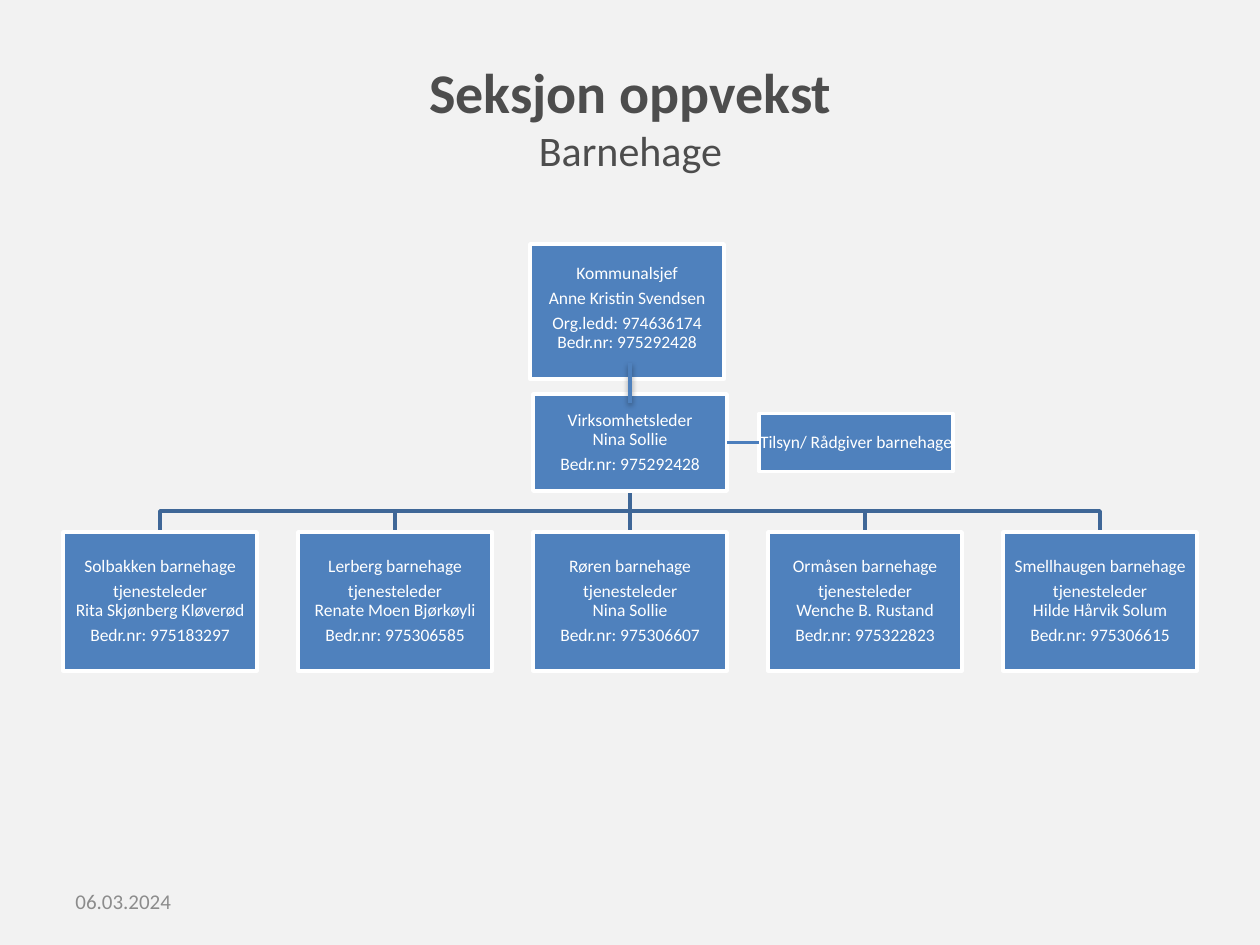
from copy import deepcopy
from dataclasses import dataclass

from lxml import etree
from pptx import Presentation
from pptx import util as u
from pptx.dml.color import RGBColor
from pptx.enum import shapes, text
from pptx.oxml.ns import qn

EMU_PER_PX = 914400 / 126
TOP, LEFT, BOTTOM, RIGHT = 0, 1, 2, 3


def px(length):
    return u.Emu(round(length * EMU_PER_PX))


@dataclass(frozen=True)
class Theme:
    font: str = "Calibri"
    background: str = "F2F2F2"
    title: str = "4D4D4D"
    box: str = "4F81BD"
    white: str = "FFFFFF"
    branch: str = "3F6797"
    advisor_link: str = "4B7EBC"
    date: str = "8C8C8C"
    title_size: float = 32
    subtitle_size: float = 24
    box_size: float = 10
    date_size: float = 12
    space_after: float = 3.5


class OrgChart:
    def __init__(self, slide, theme):
        self.slide = slide
        self.theme = theme
        slide.background.fill.solid()
        slide.background.fill.fore_color.rgb = RGBColor.from_string(theme.background)

    def run(self, paragraph, wording, size, color, bold=False):
        run = paragraph.add_run()
        run.text = wording
        run.font.name = self.theme.font
        run.font.size = u.Pt(size)
        run.font.bold = bold
        run.font.color.rgb = RGBColor.from_string(color)
        return run

    def line_break(self, paragraph, run):
        """Break the line at the type size of the run before it."""
        paragraph.add_line_break()
        paragraph._p[-1].append(deepcopy(run._r.rPr))

    def title(self, heading, subheading):
        title = self.slide.shapes.title
        title.left, title.top, title.width, title.height = map(px, (64, 38, 1133, 157))
        title.text_frame.vertical_anchor = text.MSO_ANCHOR.MIDDLE
        paragraph = title.text_frame.paragraphs[0]
        paragraph.alignment = text.PP_ALIGN.CENTER
        first = self.run(paragraph, heading, self.theme.title_size, self.theme.title, True)
        self.line_break(paragraph, first)
        self.run(paragraph, subheading, self.theme.subtitle_size, self.theme.title)

    def box(self, x, y, width, height, paragraphs, bottom_inset=1):
        """Add a box; each paragraph is a tuple of lines."""
        box = self.slide.shapes.add_shape(
            shapes.MSO_SHAPE.RECTANGLE, *map(px, (x, y, width, height)))
        box.shadow.inherit = False
        box.fill.solid()
        box.fill.fore_color.rgb = RGBColor.from_string(self.theme.box)
        box.line.color.rgb = RGBColor.from_string(self.theme.white)
        box.line.width = u.Pt(2)
        frame = box.text_frame
        frame.word_wrap = False
        frame.vertical_anchor = text.MSO_ANCHOR.MIDDLE
        frame.margin_left = frame.margin_right = frame.margin_top = px(1)
        frame.margin_bottom = px(bottom_inset)
        for i, lines in enumerate(paragraphs):
            paragraph = frame.add_paragraph() if i else frame.paragraphs[0]
            paragraph.alignment = text.PP_ALIGN.CENTER
            paragraph.line_spacing = 0.9
            paragraph.space_after = u.Pt(self.theme.space_after)
            for j, line in enumerate(lines):
                if j:
                    self.line_break(paragraph, run)
                run = self.run(paragraph, line, self.theme.box_size, self.theme.white)
        return box

    def branch(self, points):
        builder = self.slide.shapes.build_freeform(*points[0], scale=EMU_PER_PX)
        builder.add_line_segments(points[1:], close=False)
        branch = builder.convert_to_shape()
        branch.shadow.inherit = False
        branch.fill.background()
        branch.line.color.rgb = RGBColor.from_string(self.theme.branch)
        branch.line.width = u.Pt(2)

    def link(self, start, end, color, width=2, shadow=False):
        link = self.slide.shapes.add_connector(
            shapes.MSO_CONNECTOR.STRAIGHT, *map(px, (*start, *end)))
        link.line.color.rgb = RGBColor.from_string(color)
        link.line.width = u.Pt(width)
        effects = etree.SubElement(link._element.spPr, qn("a:effectLst"))
        if shadow:
            outer = etree.SubElement(
                effects, qn("a:outerShdw"), blurRad=str(u.Pt(3.1)),
                dist=str(u.Pt(1.6)), dir="5400000", rotWithShape="0")
            black = etree.SubElement(outer, qn("a:srgbClr"), val="000000")
            etree.SubElement(black, qn("a:alpha"), val="38000")
        return link

    def date(self, wording):
        date = self.slide.shapes.add_textbox(*map(px, (63, 876, 294, 50)))
        date.text_frame.word_wrap = True
        date.text_frame.vertical_anchor = text.MSO_ANCHOR.MIDDLE
        self.run(date.text_frame.paragraphs[0], wording, self.theme.date_size, self.theme.date)


KINDERGARTENS = [
    ("Solbakken", "Rita Skjønberg Kløverød", "975183297"),
    ("Lerberg", "Renate Moen Bjørkøyli", "975306585"),
    ("Røren", "Nina Sollie", "975306607"),
    ("Ormåsen", "Wenche B. Rustand", "975322823"),
    ("Smellhaugen", "Hilde Hårvik Solum", "975306615"),
]
BOX_W = 194
ROW_X, ROW_Y, ROW_H, ROW_STEP = 63, 532, 139, 235
CENTER_X = 630
LEADER_Y, LEADER_H = 394, 97
LEADER_BOTTOM = LEADER_Y + LEADER_H
LEADER_MIDDLE = LEADER_Y + LEADER_H / 2
BUS_Y = (LEADER_BOTTOM + ROW_Y) // 2
ADVISOR_X, ADVISOR_H = 759, 58


def main():
    prs = Presentation()
    prs.slide_width, prs.slide_height = px(1260), px(945)
    theme = Theme()
    chart = OrgChart(prs.slides.add_slide(prs.slide_layouts[5]), theme)
    chart.title("Seksjon oppvekst", "Barnehage")

    # Branches from the leader to the kindergartens, behind the boxes
    middle = len(KINDERGARTENS) // 2
    for i in range(len(KINDERGARTENS)):
        x = ROW_X + i * ROW_STEP + BOX_W // 2
        if i == middle:
            trunk = chart.link((x, LEADER_BOTTOM), (x, ROW_Y), theme.branch)
        else:
            chart.branch([(CENTER_X, LEADER_BOTTOM), (CENTER_X, BUS_Y), (x, BUS_Y), (x, ROW_Y)])

    # Management
    chart.box(530, 244, BOX_W, 135, [
        ("Kommunalsjef",),
        ("Anne Kristin Svendsen",),
        ("Org.ledd: 974636174", "Bedr.nr: 975292428"),
    ], bottom_inset=8)
    leader = chart.box(CENTER_X - BOX_W // 2, LEADER_Y, BOX_W, LEADER_H, [
        ("Virksomhetsleder", "Nina Sollie"),
        ("Bedr.nr: 975292428",),
    ])

    # Kindergartens
    units = [
        chart.box(ROW_X + i * ROW_STEP, ROW_Y, BOX_W, ROW_H, [
            (f"{name} barnehage",),
            ("tjenesteleder", manager),
            (f"Bedr.nr: {number}",),
        ])
        for i, (name, manager, number) in enumerate(KINDERGARTENS)
    ]
    trunk.begin_connect(leader, BOTTOM)
    trunk.end_connect(units[middle], TOP)

    # Advisor and the links of the management
    advisor = chart.box(ADVISOR_X, LEADER_MIDDLE - ADVISOR_H / 2, BOX_W, ADVISOR_H,
                        [("Tilsyn/ Rådgiver barnehage",)])
    chart.link((CENTER_X, 363), (CENTER_X, 403), theme.box, shadow=True)
    advisor_link = chart.link((727, LEADER_MIDDLE), (ADVISOR_X, LEADER_MIDDLE),
                              theme.advisor_link, 1.5)
    advisor_link.begin_connect(leader, RIGHT)
    advisor_link.end_connect(advisor, LEFT)

    chart.date("06.03.2024")
    prs.save("out.pptx")


if __name__ == "__main__":
    main()
